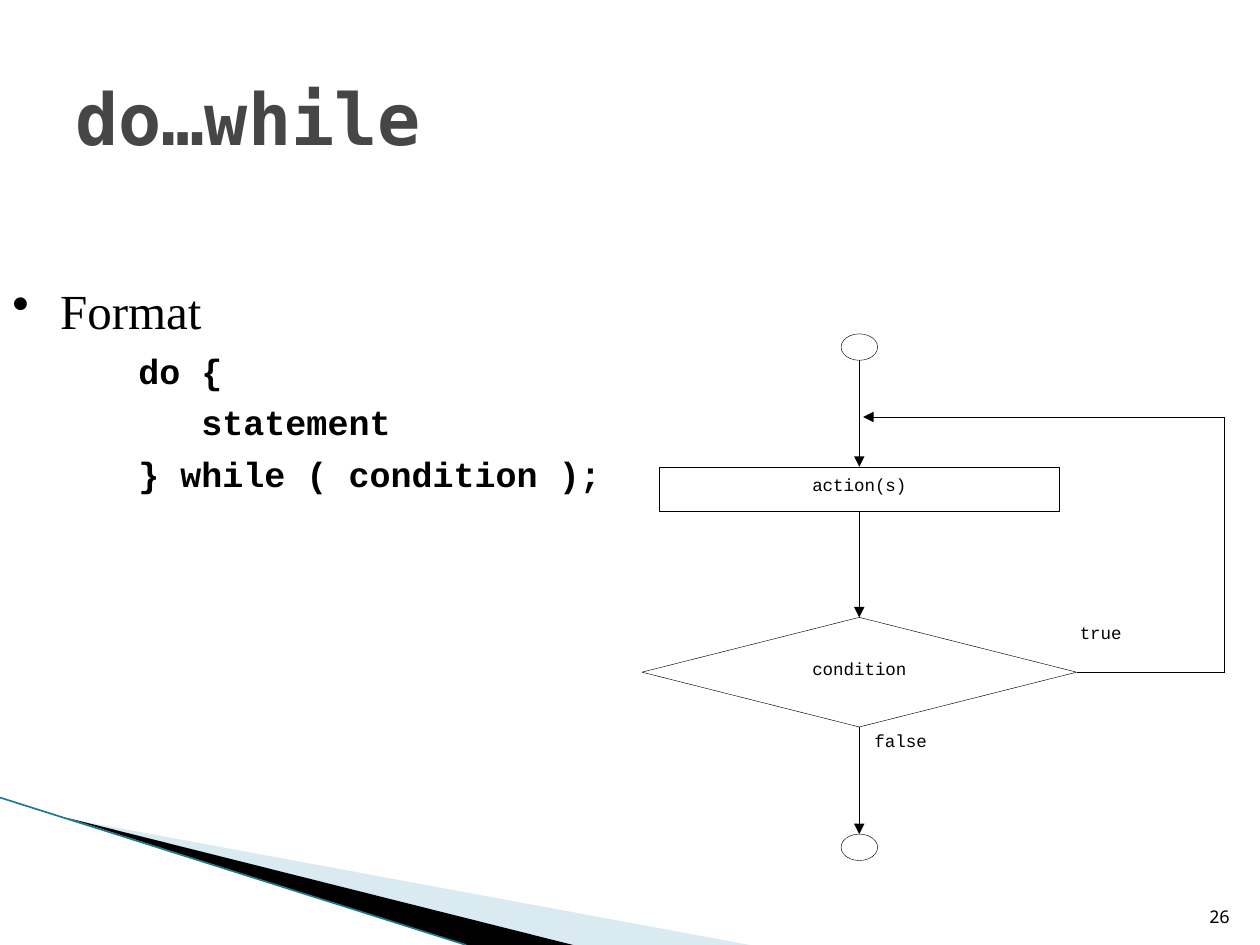
from lxml.etree import SubElement
from pptx import Presentation
from pptx.dml.color import RGBColor
from pptx.enum.shapes import MSO_CONNECTOR, MSO_SHAPE
from pptx.enum.text import MSO_ANCHOR, PP_ALIGN
from pptx.oxml.ns import qn
from pptx.util import Inches, Pt

COLORS = {
    "ink": "000000",
    "title": "464646",
    "paper": "FFFFFF",
    "pale": "A0CBDC",
    "teal": "1F7A8C",
}
UNIT = Inches(0.1)  # the page is a grid of 100 columns by 75 rows
CENTER = 68.2  # column of the flowchart's main axis
LOOP = 97.2  # column of the loop's way back

TITLE = {"size": Pt(41), "name": "DejaVu Sans Mono", "bold": True}
TOPIC = {"size": Pt(28), "name": "Times New Roman"}
CODE = {"size": Pt(20), "name": "Courier New", "bold": True}
LABEL = {"size": Pt(10), "name": "Courier New"}
NUMBER = {"size": Pt(10), "name": "Noto Sans Mono"}


def grid(*cells):
    return [round(cell * UNIT) for cell in cells]


def color(name):
    return RGBColor.from_string(COLORS[name])


def style_line(line, name="ink", width=0.25):
    line.color.rgb = color(name)
    line.width = Pt(width)


def style_text(paragraph, font, name="ink"):
    for attribute, value in font.items():
        setattr(paragraph.font, attribute, value)
    paragraph.font.color.rgb = color(name)


def add_box(page, area, anchor=MSO_ANCHOR.TOP, wrap=True, inset=True):
    box = page.shapes.add_textbox(*grid(*area))
    frame = box.text_frame
    frame.word_wrap = wrap
    frame.vertical_anchor = anchor
    if not inset:
        for side in ("left", "top", "right", "bottom"):
            setattr(frame, f"margin_{side}", 0)
    return frame


def add_text(page, text, area, font, name="ink", align=PP_ALIGN.LEFT, **layout):
    paragraph = add_box(page, area, **layout).paragraphs[0]
    paragraph.text = text
    paragraph.alignment = align
    style_text(paragraph, font, name)


def set_indent(paragraph, left, hanging, bullet=None):
    properties = paragraph._p.get_or_add_pPr()
    properties.set("marL", str(Inches(left)))
    properties.set("indent", str(-Inches(hanging)))
    if bullet:
        SubElement(properties, qn("a:buChar"), char=bullet)
    else:
        SubElement(properties, qn("a:buNone"))


def add_format(page):
    frame = add_box(page, (0, 21.8, 50, 17.8))
    topic = frame.paragraphs[0]
    topic.text = "Format"
    set_indent(topic, 0.38, 0.38, "•")
    style_text(topic, TOPIC)
    for code in ("do {", "   statement", "} while ( condition );"):
        paragraph = frame.add_paragraph()
        paragraph.text = code
        set_indent(paragraph, 1.25, 0.25)
        paragraph.space_before = Pt(5.5)
        style_text(paragraph, CODE)


def add_wedge(page, corners, name, opacity=100):
    points = [grid(*corner) for corner in corners]
    builder = page.shapes.build_freeform(*points[0])
    builder.add_line_segments(points[1:], close=True)
    wedge = builder.convert_to_shape()
    wedge.shadow.inherit = False
    wedge.fill.solid()
    wedge.fill.fore_color.rgb = color(name)
    wedge.line.fill.background()
    if opacity < 100:
        fill = wedge._element.spPr.find(qn("a:solidFill"))
        SubElement(fill[0], qn("a:alpha"), val=str(opacity * 1000))


def add_node(page, kind, top, width, height, fill=None):
    """Add an outlined shape centred on the flowchart's main axis."""
    area = grid(CENTER - width / 2, top, width, height)
    node = page.shapes.add_shape(kind, *area)
    node.shadow.inherit = False
    if fill:
        node.fill.solid()
        node.fill.fore_color.rgb = color(fill)
    else:
        node.fill.background()
    style_line(node.line)
    return node


def add_line(page, start, end, source=None, target=None, arrow=False,
             name="ink", width=0.25):
    """Draw a line; source and target are (shape, side) pairs to join."""
    line = page.shapes.add_connector(
        MSO_CONNECTOR.STRAIGHT, *grid(*start, *end))
    if source:
        line.begin_connect(*source)
    if target:
        line.end_connect(*target)
    style_line(line.line, name, width)
    if arrow:
        SubElement(line.line._get_or_add_ln(), qn("a:tailEnd"), type="triangle")
    SubElement(line._element.spPr, qn("a:effectLst"))


def add_decoration(page):
    add_wedge(page, [(5.5, 65), (59.5, 75), (45.6, 75)], "pale", 40)
    add_wedge(page, [(5.3, 64.9), (45.5, 75), (37, 75)], "ink")
    add_line(page, (0, 63.3), (37, 75), name="teal", width=0.95)


def add_flowchart(page):
    start = add_node(page, MSO_SHAPE.OVAL, 26.5, 2.9, 2.1)
    action = add_node(page, MSO_SHAPE.RECTANGLE, 37.05, 31.7, 3.5)
    condition = add_node(page, MSO_SHAPE.DIAMOND, 49, 34.5, 8.7, "paper")
    end = add_node(page, MSO_SHAPE.OVAL, 66.2, 2.9, 2.1)

    start_bottom = (start.top + start.height) / UNIT
    add_line(page, (CENTER, start_bottom), (CENTER, 37.05),
             target=(action, 0), arrow=True)
    for upper, lower in ((action, condition), (condition, end)):
        add_line(page, (CENTER, 0), (CENTER, 0),
                 (upper, 2), (lower, 0), arrow=True)

    middle, back = 53.35, 33.1
    add_line(page, (85.5, middle), (LOOP, middle), source=(condition, 3))
    add_line(page, (LOOP, middle), (LOOP, back))
    add_line(page, (LOOP, back), (CENTER + 0.3, back), arrow=True)

    for text, top in (("action(s)", 37.6), ("condition", 52.2)):
        add_text(page, text, (CENTER - 11.55, top, 23.1, 3), LABEL,
                 align=PP_ALIGN.CENTER, inset=False)
    for text, left, top, width in (("true", 85.7, 49.4, 10.2),
                                   ("false", 69.4, 57.9, 12.5)):
        add_text(page, text, (left, top, width, 4.2), LABEL, inset=False)


def main():
    deck = Presentation()
    deck.slide_width, deck.slide_height = grid(100, 75)
    page = deck.slides.add_slide(deck.slide_layouts[6])
    page.background.fill.solid()
    page.background.fill.fore_color.rgb = color("paper")

    add_decoration(page)
    add_text(page, "do…while", (5, 3, 90, 12.5), TITLE, "title",
             anchor=MSO_ANCHOR.MIDDLE)
    add_format(page)
    add_flowchart(page)
    add_text(page, "26", (94.6, 70.1, 4, 4), NUMBER, align=PP_ALIGN.RIGHT,
             anchor=MSO_ANCHOR.BOTTOM)
    deck.save("out.pptx")


if __name__ == "__main__":
    main()
